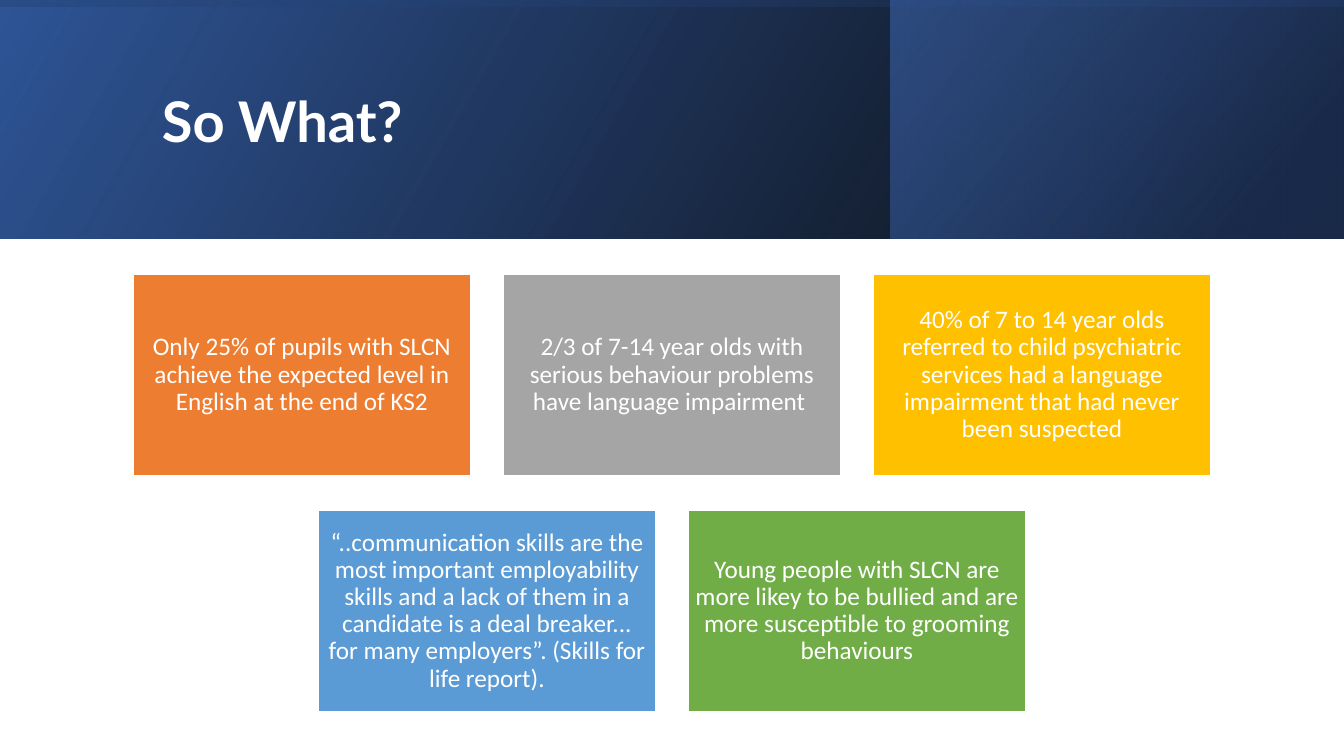
from lxml import etree
from pptx import Presentation, util as u
from pptx.dml.color import RGBColor
from pptx.enum import shapes, text
from pptx.oxml import ns

PX = 914400 / 100.8
WIDTH, HEIGHT, HEADER = 1344, 756, 239
COLORS = {
    "white": "FFFFFF", "black": "000000", "navy": "203864", "blue": "2F5597", "bright": "4472C4",
    "orange": "ED7D31", "gray": "A5A5A5", "gold": "FFC000", "sky": "5B9BD5", "green": "70AD47",
}


def add_rectangle(left, top, width, height):
    box = [u.Emu(round(value * PX)) for value in (left, top, width, height)]
    shape = slide.shapes.add_shape(shapes.MSO_SHAPE.RECTANGLE, *box)
    shape.shadow.inherit = False
    shape.line.fill.background()
    shape.fill.background()
    return shape


def write_text(shape, words, font_name, size, inset):
    frame = shape.text_frame
    frame.word_wrap = True
    frame.vertical_anchor = text.MSO_ANCHOR.MIDDLE
    frame.margin_left = frame.margin_right = u.Emu(round(inset * PX))
    frame.margin_top = frame.margin_bottom = u.Emu(round(min(inset, 7) * PX))
    paragraph = frame.paragraphs[0]
    paragraph.text = words
    paragraph.line_spacing = 0.9
    paragraph.font.name = font_name
    paragraph.font.size = u.Pt(size)
    paragraph.font.color.rgb = RGBColor.from_string(COLORS["white"])
    return paragraph


presentation = Presentation()
presentation.slide_width = u.Emu(round(WIDTH * PX))
presentation.slide_height = u.Emu(round(HEIGHT * PX))
slide = presentation.slides.add_slide(presentation.slide_layouts[6])

middle = (WIDTH - HEADER) / 2
header_layers = [
    ((0, 0, WIDTH, HEADER), 0, 330, [(0, "black", 96), (100, "blue", 100)]),
    ((891, 0, 452, HEADER), 0, 320, [(19, "navy", 68), (100, "bright", 48)]),
    ((middle, -middle, HEADER, WIDTH), 270, 350, [(23, "blue", 16), (99, "black", 45)]),
]
for box, rotation, angle, stops in header_layers:
    layer = add_rectangle(*box)
    layer.rotation = rotation
    properties = layer.element.spPr
    properties.find(ns.qn("a:xfrm")).set("flipH", "1")
    gradient = etree.Element(ns.qn("a:gradFill"), rotWithShape="1")
    stop_list = etree.SubElement(gradient, ns.qn("a:gsLst"))
    for position, color, opacity in stops:
        stop = etree.SubElement(stop_list, ns.qn("a:gs"), pos=str(position * 1000))
        shade = etree.SubElement(stop, ns.qn("a:srgbClr"), val=COLORS[color])
        etree.SubElement(shade, ns.qn("a:alpha"), val=str(opacity * 1000))
    etree.SubElement(gradient, ns.qn("a:lin"), ang=str(angle * 60000), scaled="0")
    properties.replace(properties.find(ns.qn("a:noFill")), gradient)

title_box = [u.Emu(round(value * PX)) for value in (152, 38, 1072, 173)]
title = write_text(slide.shapes.add_textbox(*title_box), "So What?", "Lato", 40, 10)
title.font.bold = True

CARD_WIDTH, CARD_HEIGHT, PITCH_X, PITCH_Y = 337, 202, 370, 236
card_rows = [
    [
        ("orange", "Only 25% of pupils with SLCN achieve the expected level in English at the end of KS2"),
        ("gray", "2/3 of 7-14 year olds with serious behaviour problems have language impairment "),
        ("gold", "40% of 7 to 14 year olds referred to child psychiatric services had a language "
                 "impairment that had never been suspected"),
    ],
    [
        ("sky", "“..communication skills are the most important employability skills and a lack of them "
                "in a candidate is a deal breaker... for many employers”. (Skills for life report)."),
        ("green", "Young people with SLCN are more likey to be bullied and are more susceptible to "
                  "grooming behaviours"),
    ],
]
for row, cards in enumerate(card_rows):
    row_width = CARD_WIDTH + PITCH_X * (len(cards) - 1)
    for column, (color, words) in enumerate(cards):
        left = (WIDTH - row_width) / 2 + column * PITCH_X
        card = add_rectangle(left, 274 + row * PITCH_Y, CARD_WIDTH, CARD_HEIGHT)
        card.fill.solid()
        card.fill.fore_color.rgb = RGBColor.from_string(COLORS[color])
        card.line.color.rgb = RGBColor.from_string(COLORS["white"])
        card.line.width = u.Pt(1)
        paragraph = write_text(card, words, "Calibri", 18, 7)
        paragraph.alignment = text.PP_ALIGN.CENTER

presentation.save("out.pptx")
